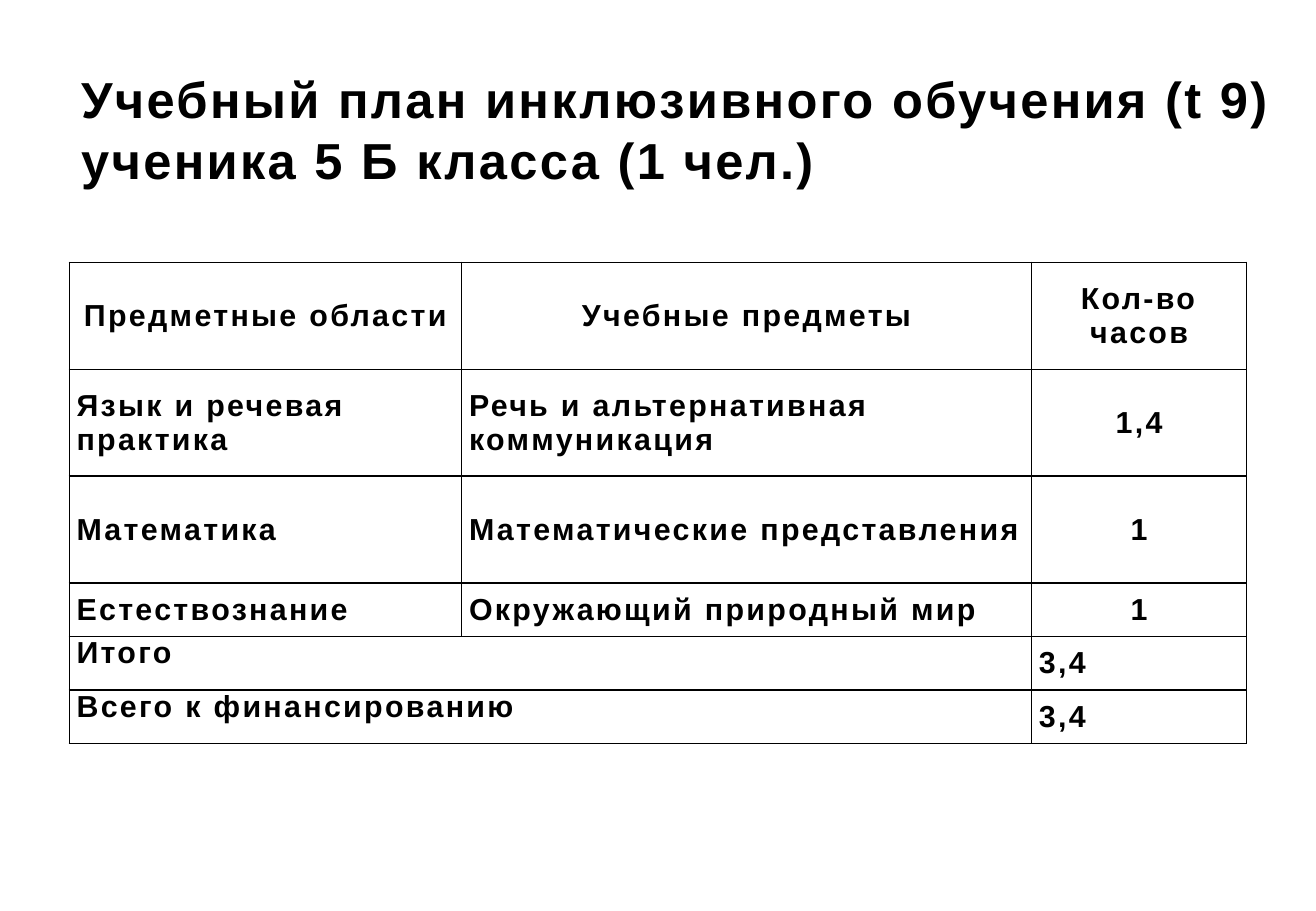
from dataclasses import dataclass

from lxml import etree
from pptx import Presentation
from pptx import util as u
from pptx.dml import color
from pptx.enum import text
from pptx.oxml import ns

SCALE = 9144  # EMU per px, 100 px to the inch


@dataclass(frozen=True)
class Theme:
    font: str = "Arial"
    ink: str = "000000"
    paper: str = "FFFFFF"
    title_size: int = 30
    table_size: int = 18
    spacing: int = 140  # hundredths of a point
    border: int = 1


class Slide:
    def __init__(self, deck, theme):
        self.theme = theme
        self.page = deck.slides.add_slide(deck.slide_layouts[6])
        self.page.background.fill.solid()
        self.page.background.fill.fore_color.rgb = color.RGBColor.from_string(theme.paper)

    def set_words(self, frame, words, size, align=text.PP_ALIGN.LEFT):
        para = frame.paragraphs[0]
        para.text = words
        para.alignment = align
        for span in para.runs:
            span.font.name = self.theme.font
            span.font.size = u.Pt(size)
            span.font.bold = True
            span.font.color.rgb = color.RGBColor.from_string(self.theme.ink)
            span.font._element.set("spc", str(self.theme.spacing))

    def title(self, words, *place):
        box = self.page.shapes.add_textbox(*(n * SCALE for n in place))
        box.text_frame.word_wrap = True
        box.text_frame.vertical_anchor = text.MSO_ANCHOR.MIDDLE
        self.set_words(box.text_frame, words, self.theme.title_size)

    def style_cell(self, cell):
        cell.margin_left = cell.margin_right = 6 * SCALE
        cell.margin_top = cell.margin_bottom = 0
        cell.fill.solid()
        cell.fill.fore_color.rgb = color.RGBColor.from_string(self.theme.paper)
        properties = cell._tc.get_or_add_tcPr()
        for index, side in enumerate(("lnL", "lnR", "lnT", "lnB")):
            line = etree.Element(ns.qn(f"a:{side}"), w=str(u.Pt(self.theme.border)))
            fill = etree.SubElement(line, ns.qn("a:solidFill"))
            etree.SubElement(fill, ns.qn("a:srgbClr"), val=self.theme.ink)
            properties.insert(index, line)

    def table(self, left, top, widths, heights, rows):
        size = (sum(widths) * SCALE, sum(heights) * SCALE)
        table = self.page.shapes.add_table(
            len(rows), len(widths), left * SCALE, top * SCALE, *size).table
        table.first_row = table.horz_banding = False
        for column, width in zip(table.columns, widths):
            column.width = width * SCALE
        for row, height in zip(table.rows, heights):
            row.height = height * SCALE
        for r, row in enumerate(rows):
            is_total = row[1] is None
            for c, words in enumerate(row):
                cell = table.cell(r, c)
                self.style_cell(cell)
                if words is None:
                    continue
                centred = r == 0 or (c == 2 and not is_total)
                top_set = is_total and c == 0
                cell.vertical_anchor = text.MSO_ANCHOR.TOP if top_set else text.MSO_ANCHOR.MIDDLE
                self.set_words(cell.text_frame, words, self.theme.table_size,
                               text.PP_ALIGN.CENTER if centred else text.PP_ALIGN.LEFT)
            if is_total:
                table.cell(r, 0).merge(table.cell(r, 1))


# None continues the cell on its left
CURRICULUM = [
    ("Предметные области", "Учебные предметы", "Кол-во часов"),
    ("Язык и речевая практика", "Речь и альтернативная коммуникация", "1,4"),
    ("Математика", "Математические представления", "1"),
    ("Естествознание", "Окружающий природный мир", "1"),
    ("Итого", None, "3,4"),
    ("Всего к финансированию", None, "3,4"),
]


def main():
    deck = Presentation()
    deck.slide_width, deck.slide_height = 1083 * SCALE, 750 * SCALE
    slide = Slide(deck, Theme())

    # Heading
    slide.title("Учебный план инклюзивного обучения (t 9)\nученика 5 Б класса (1 чел.)",
                57, 50, 1018, 112)

    # Subjects and hours
    slide.table(57, 216, [323, 469, 177], [88] * 3 + [44] * 3, CURRICULUM)

    deck.save("out.pptx")


if __name__ == "__main__":
    main()
